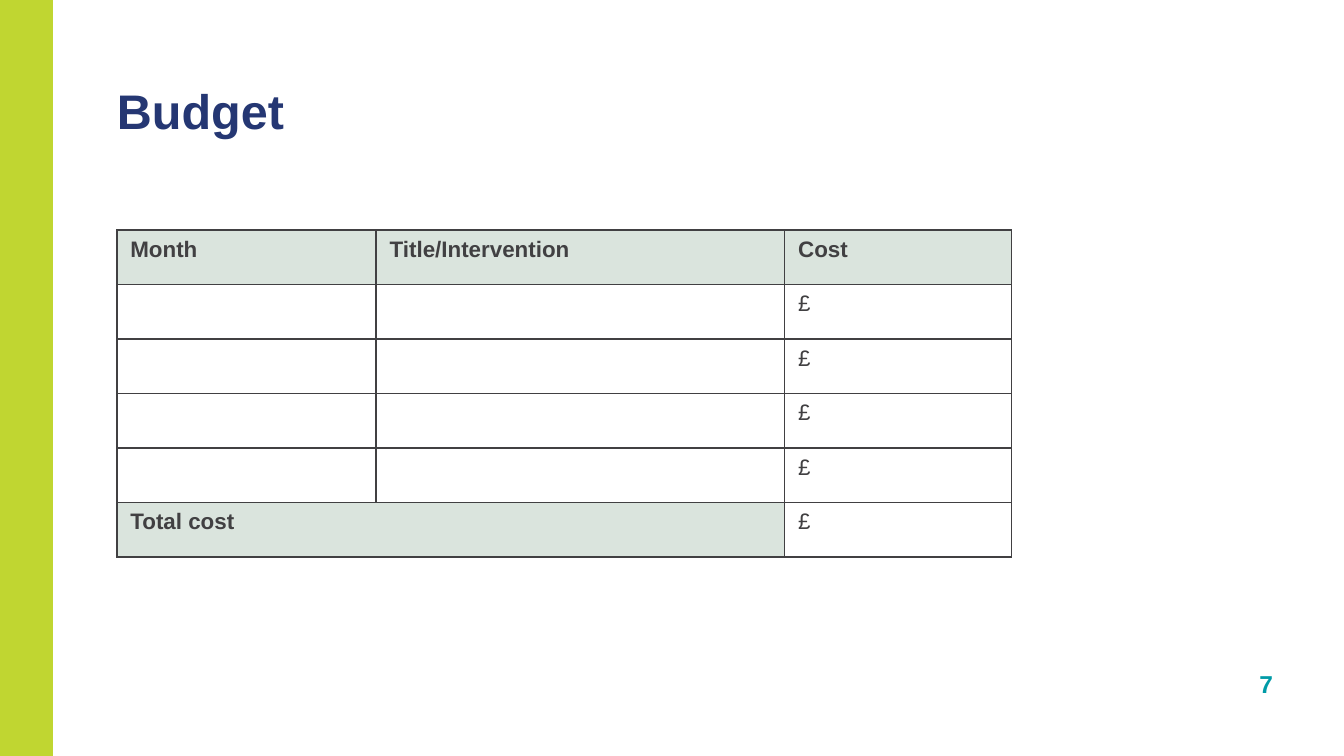
from dataclasses import dataclass

from lxml.etree import SubElement
from pptx import Presentation
from pptx.dml.color import RGBColor
from pptx.enum.shapes import MSO_SHAPE
from pptx.enum.text import MSO_ANCHOR, PP_ALIGN
from pptx.oxml.ns import qn
from pptx.util import Cm, Pt


@dataclass(frozen=True)
class Theme:
    font: str = "Arial"
    lime: str = "C0D631"
    teal: str = "009BA7"
    navy: str = "253773"
    ink: str = "414042"
    sage: str = "DAE4DD"
    white: str = "FFFFFF"
    title_size: float = 26
    number_size: float = 13.1
    table_size: float = 12
    border: float = 1


@dataclass(frozen=True)
class Label:
    text: str
    left: float
    top: float
    width: float
    height: float
    size: float
    color: str
    align: PP_ALIGN
    margin_x: float = 0
    margin_y: float = 0


@dataclass(frozen=True)
class Entry:
    text: str = ""
    heading: bool = False


THEME = Theme()
LABELS = (
    Label("7", 22.3, 12.52, 2.01, 0.81, THEME.number_size, THEME.teal,
          PP_ALIGN.RIGHT, 0.25, 0.13),
    Label("Budget", 2.21, 1.55, 15.6, 1.09, THEME.title_size, THEME.navy,
          PP_ALIGN.LEFT),
)
COLUMN_WIDTHS = (4.9, 7.72, 4.29)
ROW_HEIGHT = 1.03
BLANK_ROWS = 4
BLANK, POUNDS = Entry(), Entry("£")
ROWS = (
    tuple(Entry(text, True) for text in ("Month", "Title/Intervention", "Cost")),
    *[(BLANK, BLANK, POUNDS)] * BLANK_ROWS,
    (Entry("Total cost", True), Entry(heading=True), POUNDS),
)


def style_paragraph(paragraph, size: float, color: str, bold: bool) -> None:
    font = paragraph.font
    font.name = THEME.font
    font.size = Pt(size)
    font.bold = bold
    font.color.rgb = RGBColor.from_string(color)


def draw_side_bar(page) -> None:
    bar = page.shapes.add_shape(
        MSO_SHAPE.RECTANGLE, Cm(-0.3), Cm(-0.1), Cm(1.3), Cm(14.5))
    bar.shadow.inherit = False
    bar.fill.solid()
    bar.fill.fore_color.rgb = RGBColor.from_string(THEME.lime)
    bar.line.fill.background()


def draw_label(page, label: Label) -> None:
    box = page.shapes.add_textbox(
        Cm(label.left), Cm(label.top), Cm(label.width), Cm(label.height))
    frame = box.text_frame
    frame.word_wrap = True
    frame.vertical_anchor = MSO_ANCHOR.BOTTOM
    frame.margin_left = frame.margin_right = Cm(label.margin_x)
    frame.margin_top = frame.margin_bottom = Cm(label.margin_y)
    paragraph = frame.paragraphs[0]
    paragraph.text = label.text
    paragraph.alignment = label.align
    style_paragraph(paragraph, label.size, label.color, True)


def set_borders(cell) -> None:
    properties = cell._tc.get_or_add_tcPr()
    for position, side in enumerate(("a:lnL", "a:lnR", "a:lnT", "a:lnB")):
        line = SubElement(properties, qn(side), w=str(Pt(THEME.border)))
        fill = SubElement(line, qn("a:solidFill"))
        SubElement(fill, qn("a:srgbClr"), val=THEME.ink)
        properties.remove(line)
        properties.insert(position, line)


def fill_cell(cell, entry: Entry) -> None:
    paragraph = cell.text_frame.paragraphs[0]
    paragraph.text = entry.text
    style_paragraph(paragraph, THEME.table_size, THEME.ink, entry.heading)
    cell.fill.solid()
    cell.fill.fore_color.rgb = RGBColor.from_string(
        THEME.sage if entry.heading else THEME.white)
    set_borders(cell)


def draw_budget(page) -> None:
    table = page.shapes.add_table(
        len(ROWS), len(COLUMN_WIDTHS), Cm(2.21), Cm(4.35),
        Cm(sum(COLUMN_WIDTHS)), Cm(ROW_HEIGHT * len(ROWS))).table
    table.first_row = False
    table.horz_banding = False
    for column, width in zip(table.columns, COLUMN_WIDTHS):
        column.width = Cm(width)
    for row, entries in zip(table.rows, ROWS):
        row.height = Cm(ROW_HEIGHT)
        for cell, entry in zip(row.cells, entries):
            fill_cell(cell, entry)
    total_row = len(ROWS) - 1
    table.cell(total_row, 0).merge(table.cell(total_row, 1))


def main() -> None:
    deck = Presentation()
    deck.slide_width, deck.slide_height = Cm(25.4), Cm(14.29)
    page = deck.slides.add_slide(deck.slide_layouts[6])
    draw_side_bar(page)
    for label in LABELS:
        draw_label(page, label)
    draw_budget(page)
    deck.save("out.pptx")


if __name__ == "__main__":
    main()
